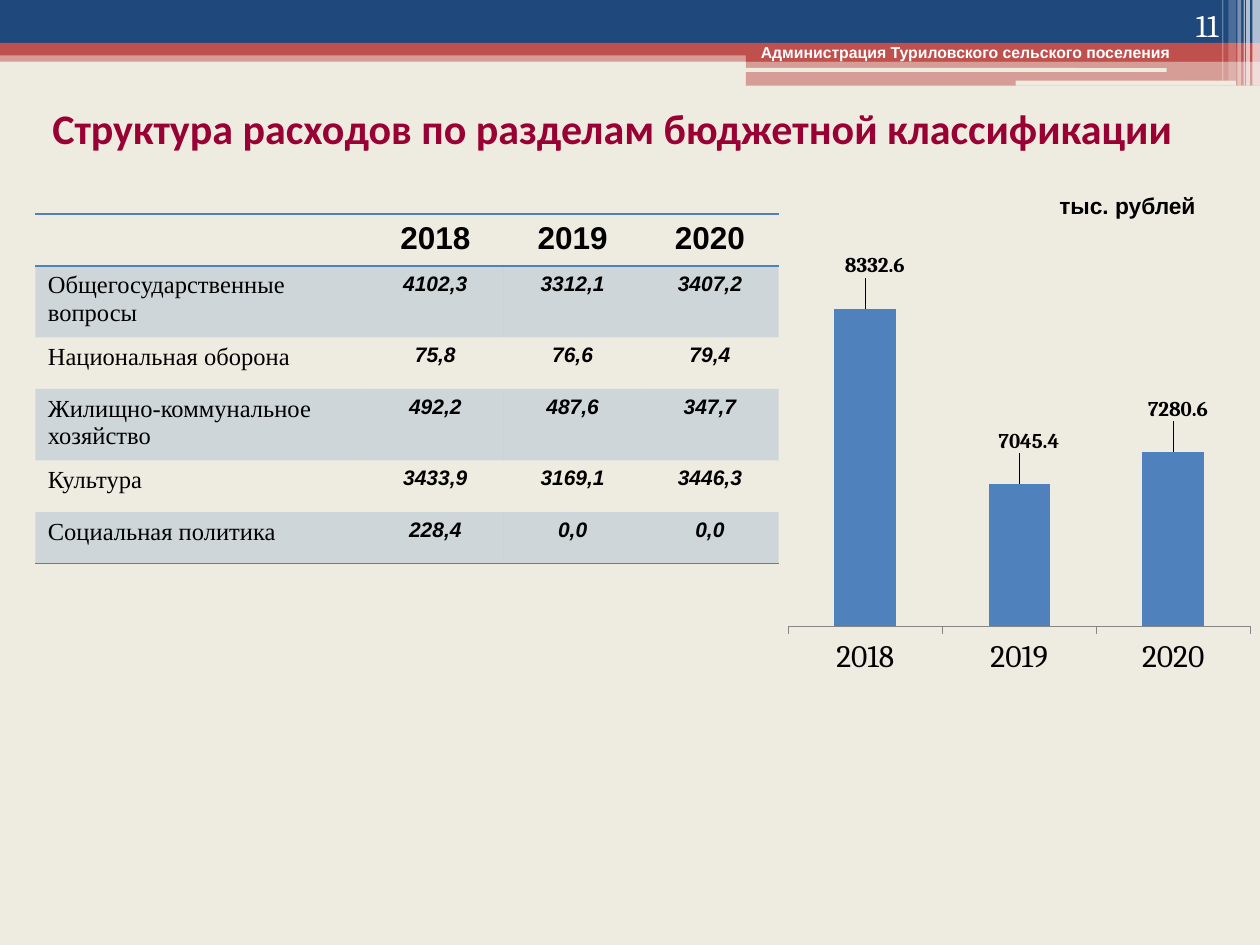
from lxml import etree
from pptx import Presentation
from pptx.chart.data import CategoryChartData
from pptx.dml.color import RGBColor
from pptx.enum.chart import XL_CHART_TYPE, XL_LABEL_POSITION, XL_TICK_MARK
from pptx.enum.shapes import MSO_SHAPE
from pptx.enum.text import MSO_ANCHOR, PP_ALIGN
from pptx.oxml import parse_xml
from pptx.oxml.ns import nsdecls, qn
from pptx.util import Inches, Pt

NAVY, RED, BLUE = "1F497D", "C0504D", "4F81BD"
CREAM, WHITE, BLACK = "EEECE1", "FFFFFF", "000000"
NO_STYLE = "{2D5ABB26-0587-4C30-8999-92F81FD0307C}"

YEARS = ["2018", "2019", "2020"]
EXPENSES = [
    ("Общегосударственные вопросы", "4102,3", "3312,1", "3407,2"),
    ("Национальная оборона", "75,8", "76,6", "79,4"),
    ("Жилищно-коммунальное хозяйство", "492,2", "487,6", "347,7"),
    ("Культура", "3433,9", "3169,1", "3446,3"),
    ("Социальная политика", "228,4", "0,0", "0,0"),
]
TOTALS = [8332.6, 7045.4, 7280.6]


def color(value):
    return RGBColor.from_string(value)


def set_fill(fill, value, alpha=100):
    fill.solid()
    fill.fore_color.rgb = color(value)
    if alpha < 100:
        clr = fill._xPr.find(qn("a:solidFill"))[0]
        etree.SubElement(clr, qn("a:alpha"), val=str(alpha * 1000))


def set_font(font, name, size, value, bold=False, italic=False):
    font.name, font.size = name, Pt(size)
    font.bold, font.italic = bold, italic
    font.color.rgb = color(value)


def add_run(tf, text, name, size, value, bold=False, italic=False, align=PP_ALIGN.LEFT):
    p = tf.paragraphs[0]
    p.alignment = align
    r = p.add_run()
    r.text = text
    set_font(r.font, name, size, value, bold, italic)


def add_text(s, box, text, *style, anchor=MSO_ANCHOR.TOP, **kwargs):
    tf = s.shapes.add_textbox(*map(Inches, box)).text_frame
    tf.word_wrap = True
    tf.vertical_anchor = anchor
    add_run(tf, text, *style, **kwargs)


def add_bar(s, box, value, alpha=100, kind=MSO_SHAPE.RECTANGLE):
    sp = s.shapes.add_shape(kind, *map(Inches, box))
    sp.shadow.inherit = False
    sp.line.fill.background()
    set_fill(sp.fill, value, alpha)


def add_header(s, x, y, w):
    # Full-width bands
    add_bar(s, (x, y + 0.4, w, 0.09), RED, 50)
    add_bar(s, (x, y, w, 0.34), NAVY)
    add_bar(s, (x, y + 0.34, w, 0.1), RED)
    # Caption tab on the right
    right = x + w
    add_bar(s, (right - 4.08, y + 0.39, 4.08, 0.1), RED)
    add_bar(s, (right - 4.08, y + 0.48, 4.08, 0.2), RED, 50)
    for dx, dy, width, height in [(4.09, 0.54, 3.35, 0.03), (1.94, 0.64, 1.75, 0.04)]:
        add_bar(s, (right - dx, y + dy, width, height), CREAM, kind=MSO_SHAPE.ROUNDED_RECTANGLE)
    # Translucent stripes at the edge
    for dx, width, height, alpha in [
        (0.06, 0.06, 0.68, 65), (0.11, 0.03, 0.68, 65), (0.13, 0.01, 0.68, 60),
        (0.18, 0.03, 0.68, 40), (0.25, 0.06, 0.64, 20), (0.3, 0.01, 0.64, 30),
    ]:
        add_bar(s, (right - dx, y, width, height), WHITE, alpha)
    # Caption and slide number
    add_text(s, (right - 4.06, y + 0.29, 3.62, 0.25),
             "Администрация Туриловского сельского поселения", "Arial", 9, WHITE, True)
    add_text(s, (right - 1.06, y, 0.83, 0.4), "11", "Cambria", 18, WHITE,
             anchor=MSO_ANCHOR.BOTTOM, align=PP_ALIGN.RIGHT)


def add_title(s, x, y, w, h):
    title = s.shapes.title
    title.left, title.top, title.width, title.height = map(Inches, (x, y, w, h))
    tf = title.text_frame
    tf.word_wrap = True
    tf.vertical_anchor = MSO_ANCHOR.MIDDLE
    add_run(tf, "Структура расходов по разделам бюджетной классификации",
            "Calibri", 24, "990033", True, align=PP_ALIGN.CENTER)


def add_border(cell, side):
    cell._tc.get_or_add_tcPr().append(parse_xml(
        f'<a:{side} {nsdecls("a")} w="12700"><a:solidFill><a:srgbClr val="{BLUE}"/>'
        f'</a:solidFill></a:{side}>'))


def add_expense_table(s, x, y, w, row_h):
    rows = [("", *YEARS), *EXPENSES]
    frame = s.shapes.add_table(len(rows), len(rows[0]), Inches(x), Inches(y),
                               Inches(w), Inches(row_h * len(rows)))
    table = frame.table
    table.first_row = table.horz_banding = False
    table._tbl.tblPr.find(qn("a:tableStyleId")).text = NO_STYLE
    year_w = 1.09
    for i, col in enumerate(table.columns):
        col.width = Inches(year_w if i else w - year_w * len(YEARS))
    for i, row in enumerate(rows):
        table.rows[i].height = Inches(row_h)
        for j, text in enumerate(row):
            cell = table.cell(i, j)
            if i == 0:
                add_border(cell, "lnT")
            if i in (0, len(rows) - 1):
                add_border(cell, "lnB")
            if i % 2:
                set_fill(cell.fill, BLUE, 20)
            else:
                cell.fill.background()
            if not text:
                continue
            if j == 0:
                add_run(cell.text_frame, text, "Times New Roman", 14, BLACK)
            else:
                add_run(cell.text_frame, text, "Arial", 12 if i else 18, BLACK, True,
                        i > 0, PP_ALIGN.CENTER)


def manual_layout(inner="", **values):
    items = "".join(f'<c:{k} val="{v}"/>' for k, v in values.items())
    return parse_xml(f'<c:layout {nsdecls("c")}><c:manualLayout>{inner}{items}'
                     '</c:manualLayout></c:layout>')


def add_totals_chart(s, x, y, w, h):
    data = CategoryChartData(number_format="0.0")
    data.categories = YEARS
    data.add_series("Series 1", TOTALS)
    chart = s.shapes.add_chart(XL_CHART_TYPE.COLUMN_CLUSTERED, *map(Inches, (x, y, w, h)),
                               data).chart
    chart.has_legend = chart.has_title = False
    set_font(chart.font, "Cambria", 18, BLACK)

    # Axes
    values = chart.value_axis
    values.minimum_scale, values.maximum_scale = 6000, 8500
    values.has_major_gridlines = values.visible = False
    cats = chart.category_axis
    cats.major_tick_mark = XL_TICK_MARK.OUTSIDE
    cats.format.line.color.rgb = color("868686")

    # Plot area
    area = chart._chartSpace.chart.plotArea
    for old in area.findall(qn("c:layout")):
        area.remove(old)
    area.insert(0, manual_layout(
        '<c:layoutTarget val="inner"/><c:xMode val="edge"/><c:yMode val="edge"/>',
        x=0.02, y=0.07, w=0.96, h=0.8))

    # Columns and their raised labels
    plot = chart.plots[0]
    plot.gap_width = 150
    plot.vary_by_categories = False
    series = plot.series[0]
    set_fill(series.format.fill, BLUE)
    for i, dx in enumerate((0.02, 0.02, 0.01)):
        label = series.points[i].data_label
        set_font(label.font, "Cambria", 12, BLACK, True)
        label.position = XL_LABEL_POSITION.OUTSIDE_END
    for dx, lbl in zip((0.02, 0.02, 0.01), series._element.iter(qn("c:dLbl"))):
        lbl.insert(1, manual_layout(x=dx, y=-0.06))


def main():
    prs = Presentation()
    prs.slide_width, prs.slide_height = Inches(10), Inches(7.5)
    s = prs.slides.add_slide(prs.slide_layouts[5])
    set_fill(s.background.fill, CREAM)
    add_header(s, 0, 0, 10)
    add_title(s, 0, 0.76, 9.72, 0.5)
    add_expense_table(s, 0.28, 1.7, 5.9, 0.41)
    add_text(s, (8.31, 1.47, 1.5, 0.32), "тыс. рублей", "Arial", 13, BLACK, True)
    add_totals_chart(s, 6.18, 2.02, 3.82, 3.39)
    prs.save("out.pptx")


if __name__ == "__main__":
    main()
